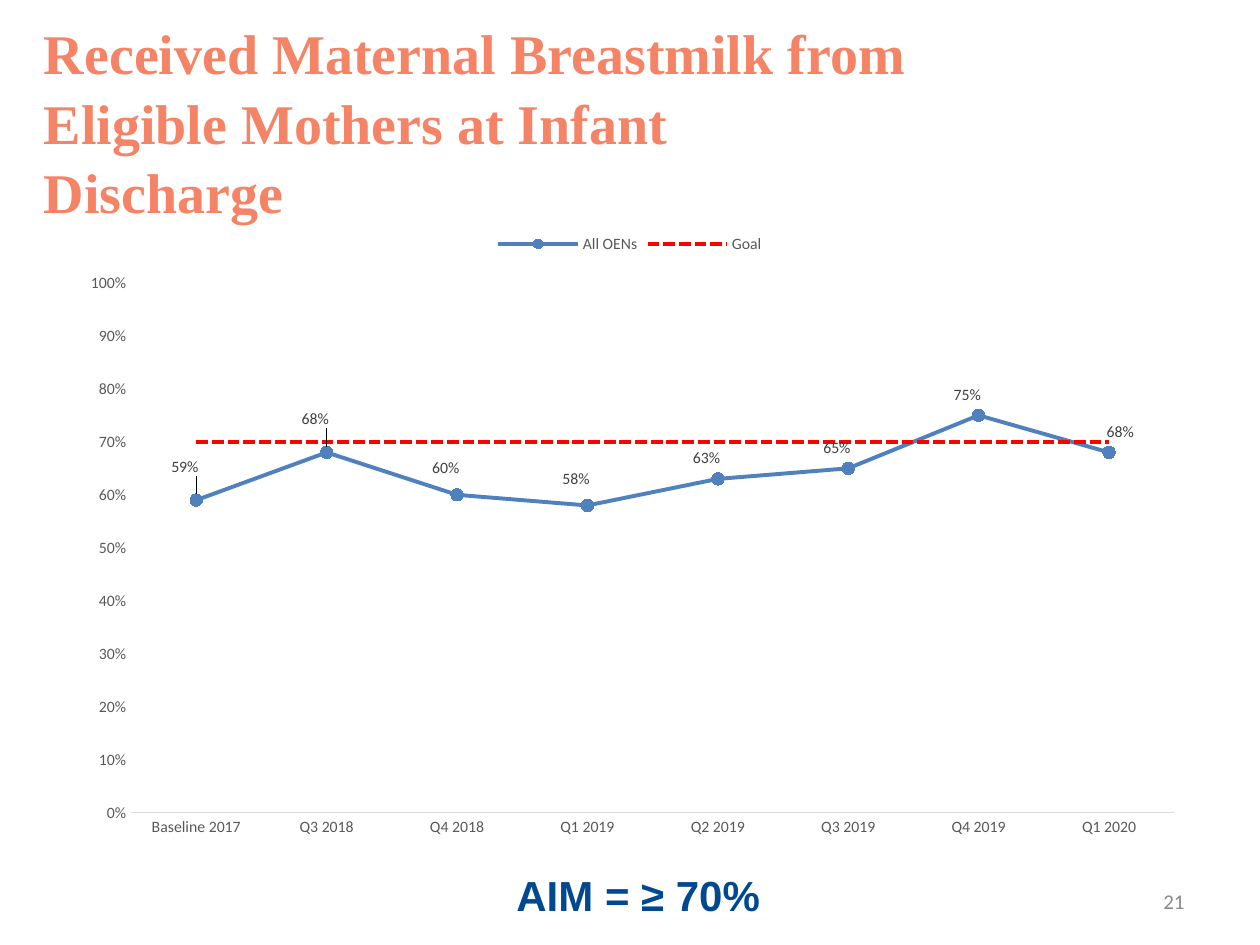
from dataclasses import dataclass

from lxml import etree
from pptx import Presentation
from pptx.chart.data import CategoryChartData
from pptx.dml.color import RGBColor
from pptx.enum.chart import (
    XL_CHART_TYPE as ChartType,
    XL_LABEL_POSITION as LabelPosition,
    XL_LEGEND_POSITION as LegendPosition,
    XL_MARKER_STYLE as MarkerStyle,
    XL_TICK_MARK as TickMark,
)
from pptx.enum.dml import MSO_LINE_DASH_STYLE as DashStyle
from pptx.enum.text import MSO_ANCHOR as Anchor, PP_ALIGN as Align
from pptx.oxml.ns import qn
from pptx.util import Inches, Pt


@dataclass(frozen=True)
class Theme:
    coral: str = "F58466"
    navy: str = "004990"
    page_gray: str = "898989"
    axis_gray: str = "595959"
    label_gray: str = "404040"
    rule_gray: str = "D9D9D9"
    rate_blue: str = "4F81BD"
    goal_red: str = "FF0000"
    title_font: str = "Times New Roman"
    aim_font: str = "Arial"
    body_font: str = "Calibri"
    title_size: int = 32
    aim_size: int = 24
    page_size: int = 12
    chart_size: int = 9
    series_width: float = 2.25


THEME = Theme()

QUARTERS = ["Baseline 2017", "Q3 2018", "Q4 2018", "Q1 2019",
            "Q2 2019", "Q3 2019", "Q4 2019", "Q1 2020"]
RATES = [0.59, 0.68, 0.6, 0.58, 0.63, 0.65, 0.75, 0.68]
GOAL = 0.7
LABEL_SHIFTS = [(-0.01, -0.02), (-0.01, -0.02), (-0.01, -0.01), (-0.01, -0.01),
                (-0.01, 0), (-0.01, 0), (-0.01, 0), (0.01, 0)]


def style_font(font, name, size, color, bold=False):
    font.name = name
    font.size = Pt(size)
    font.bold = bold
    font.color.rgb = RGBColor.from_string(color)


def style_chart_font(font, color=THEME.axis_gray):
    style_font(font, THEME.body_font, THEME.chart_size, color)


def style_line(line, color, width):
    line.color.rgb = RGBColor.from_string(color)
    line.width = Pt(width)


def add_text(slide, box, text, name, size, color, bold=False,
             align=Align.LEFT, anchor=Anchor.TOP, spacing=None):
    text_frame = slide.shapes.add_textbox(*map(Inches, box)).text_frame
    text_frame.word_wrap = True
    text_frame.vertical_anchor = anchor
    text_frame.text = text
    paragraph = text_frame.paragraphs[0]
    paragraph.alignment = align
    paragraph.line_spacing = spacing
    style_font(paragraph.runs[0].font, name, size, color, bold)


def make_layout(**settings):
    layout = etree.Element(qn("c:layout"))
    manual = etree.SubElement(layout, qn("c:manualLayout"))
    for tag, value in settings.items():
        etree.SubElement(manual, qn(f"c:{tag}")).set("val", str(value))
    return layout


def place_plot(chart, x, y, w, h):
    plot_area = chart.plots[0]._element.getparent()
    for layout in plot_area.findall(qn("c:layout")):
        plot_area.remove(layout)
    plot_area.insert(0, make_layout(layoutTarget="inner", xMode="edge",
                                    yMode="edge", x=x, y=y, w=w, h=h))


def style_axes(chart):
    for axis in (chart.category_axis, chart.value_axis):
        axis.has_major_gridlines = False
        axis.major_tick_mark = axis.minor_tick_mark = TickMark.NONE
        style_chart_font(axis.tick_labels.font)
    style_line(chart.category_axis.format.line, THEME.rule_gray, 0.75)
    value_axis = chart.value_axis
    value_axis.format.line.fill.background()
    value_axis.minimum_scale, value_axis.maximum_scale = 0, 1
    value_axis.major_unit = 0.1
    value_axis.tick_labels.number_format = "0%"
    value_axis.tick_labels.number_format_is_linked = False


def label_rates(series):
    labels = series.data_labels
    labels.show_value = True
    labels.number_format = "0%"
    labels.number_format_is_linked = False
    labels.position = LabelPosition.ABOVE
    style_chart_font(labels.font, THEME.label_gray)
    for index, (x, y) in enumerate(LABEL_SHIFTS):
        label = series.points[index].data_label
        style_chart_font(label.font, THEME.label_gray)
        label.position = LabelPosition.ABOVE
    for item, (x, y) in zip(labels._element.findall(qn("c:dLbl")), LABEL_SHIFTS):
        item.insert(1, make_layout(x=x, y=y))


def style_series(chart):
    rates, goal = chart.plots[0].series
    for series, color in ((rates, THEME.rate_blue), (goal, THEME.goal_red)):
        series.smooth = False
        style_line(series.format.line, color, THEME.series_width)
    rates.marker.style = MarkerStyle.CIRCLE
    rates.marker.size = 7
    rates.marker.format.fill.solid()
    rates.marker.format.fill.fore_color.rgb = RGBColor.from_string(THEME.rate_blue)
    style_line(rates.marker.format.line, THEME.rate_blue, 0.75)
    goal.marker.style = MarkerStyle.NONE
    goal.format.line.dash_style = DashStyle.SQUARE_DOT
    label_rates(rates)


def add_rate_chart(slide, box):
    data = CategoryChartData(number_format="0%")
    data.categories = QUARTERS
    data.add_series("All OENs", RATES)
    data.add_series("Goal", [GOAL] * len(QUARTERS))
    chart = slide.shapes.add_chart(
        ChartType.LINE_MARKERS, *map(Inches, box), data).chart
    chart.has_title = False
    chart.font.name = THEME.body_font
    chart.font.size = Pt(10)
    chart.plots[0].vary_by_categories = False
    chart.has_legend = True
    chart.legend.position = LegendPosition.TOP
    chart.legend.include_in_layout = False
    style_chart_font(chart.legend.font)
    style_axes(chart)
    style_series(chart)
    place_plot(chart, 0.06, 0.1, 0.92, 0.85)


def add_title(slide, box):
    add_text(slide, box,
             "Received Maternal Breastmilk from Eligible Mothers at Infant Discharge",
             THEME.title_font, THEME.title_size, THEME.coral, bold=True,
             anchor=Anchor.MIDDLE, spacing=1.04)


def add_aim(slide, box):
    add_text(slide, box, "AIM = ≥ 70%", THEME.aim_font, THEME.aim_size,
             THEME.navy, bold=True)


def add_page_number(slide, box):
    add_text(slide, box, "21", THEME.body_font, THEME.page_size,
             THEME.page_gray, align=Align.RIGHT, anchor=Anchor.MIDDLE)


def main():
    presentation = Presentation()
    presentation.slide_width, presentation.slide_height = Inches(10), Inches(7.5)
    slide = presentation.slides.add_slide(presentation.slide_layouts[6])
    add_page_number(slide, (7.17, 6.95, 2.33, 0.4))
    add_title(slide, (0.25, 0.33, 7.08, 1.25))
    add_aim(slide, (4, 6.85, 2.46, 0.5))
    add_rate_chart(slide, (0.5, 1.75, 9, 4.95))
    presentation.save("out.pptx")


if __name__ == "__main__":
    main()
